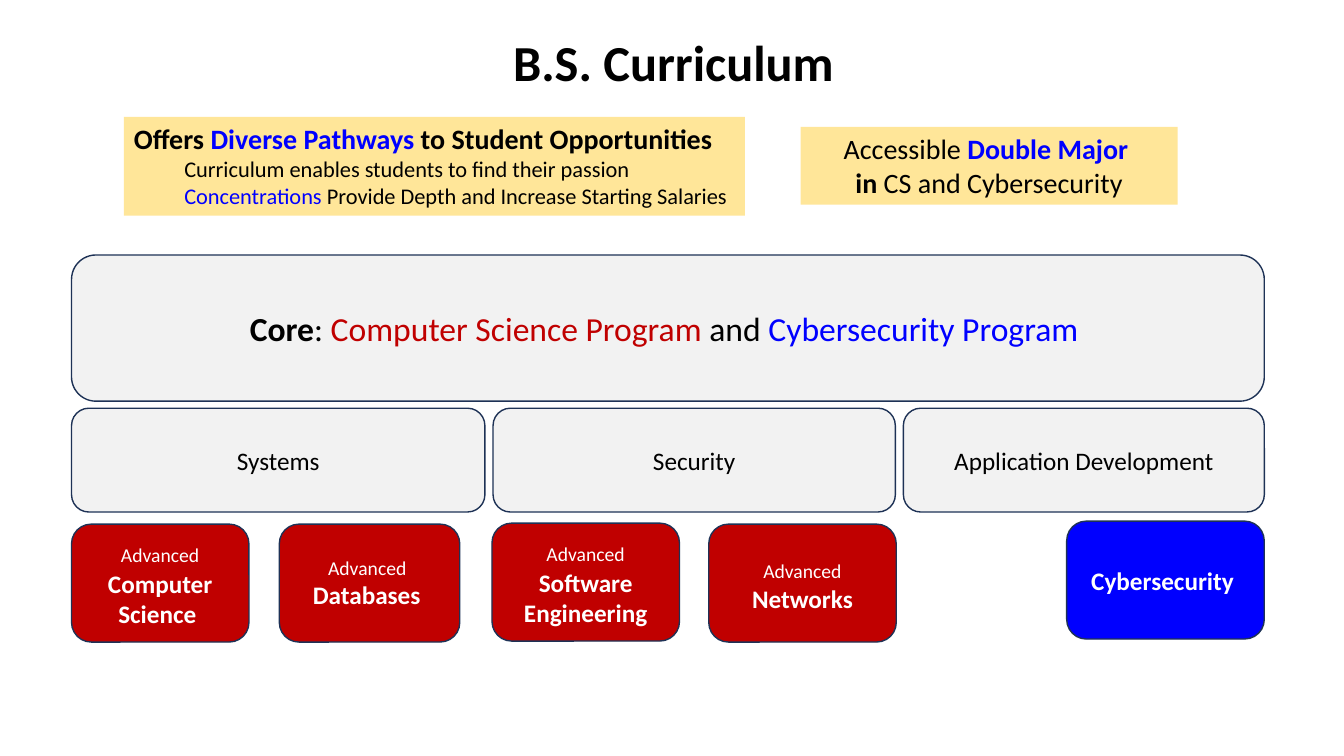
import pptx
import pptx.dml.color
import pptx.enum.shapes
import pptx.enum.text
import pptx.util

PX = 9144  # EMU in one px, 100 px to the inch
BLACK, WHITE, RED, BLUE = "000000", "FFFFFF", "C00000", "0000FF"
GREY, SAND, NAVY = "F2F2F2", "FFE699", "1E3256"
ALIGN = pptx.enum.text.PP_ALIGN
ANCHOR = pptx.enum.text.MSO_ANCHOR
SHAPE = pptx.enum.shapes.MSO_SHAPE


def px(length):
    return pptx.util.Emu(length * PX)


def rgb(hex_code):
    return pptx.dml.color.RGBColor.from_string(hex_code)


def run(text, size, color=BLACK, bold=False):
    """Describe a stretch of text with its format."""
    return text, {"size": pptx.util.Pt(size), "bold": bold}, color


class SlideBuilder:
    font_name = "Calibri"

    def __init__(self, slide):
        self.slide = slide

    def fill_text(self, frame, paragraphs, align=ALIGN.CENTER):
        for index, runs in enumerate(paragraphs):
            paragraph = frame.paragraphs[0] if index == 0 else frame.add_paragraph()
            paragraph.alignment = align
            for text, font_format, color in runs:
                piece = paragraph.add_run()
                piece.text = text
                for key, value in {"name": self.font_name, **font_format}.items():
                    setattr(piece.font, key, value)
                piece.font.color.rgb = rgb(color)

    def title(self, box, runs):
        title = self.slide.shapes.title
        for key, value in zip(("left", "top", "width", "height"), box):
            setattr(title, key, px(value))
        title.text_frame.vertical_anchor = ANCHOR.MIDDLE
        self.fill_text(title.text_frame, [runs])
        title.text_frame.paragraphs[0].line_spacing = 0.9

    def panel(self, kind, box, fill, paragraphs, align=ALIGN.CENTER, **frame_format):
        shape = self.slide.shapes.add_shape(kind, *map(px, box))
        shape.shadow.inherit = False
        shape.fill.solid()
        shape.fill.fore_color.rgb = rgb(fill)
        for key, value in {"word_wrap": True, **frame_format}.items():
            setattr(shape.text_frame, key, value)
        self.fill_text(shape.text_frame, paragraphs, align)
        return shape

    def block(self, box, fill, paragraphs):
        """Add a rounded, outlined curriculum block."""
        block = self.panel(SHAPE.ROUNDED_RECTANGLE, box, fill, paragraphs,
                           vertical_anchor=ANCHOR.MIDDLE)
        block.line.color.rgb = rgb(NAVY)
        block.line.width = pptx.util.Pt(1)

    def note(self, box, paragraphs, align=ALIGN.CENTER, wrap=True):
        """Add a sand-coloured highlight that grows with its text."""
        note = self.panel(SHAPE.RECTANGLE, box, SAND, paragraphs, align,
                          word_wrap=wrap, vertical_anchor=ANCHOR.TOP,
                          auto_size=pptx.enum.text.MSO_AUTO_SIZE.SHAPE_TO_FIT_TEXT)
        note.line.fill.background()
        return note


def main():
    deck = pptx.Presentation()
    deck.slide_width, deck.slide_height = px(1333), px(750)
    builder = SlideBuilder(deck.slides.add_slide(deck.slide_layouts[5]))

    builder.title((93, 14, 1150, 102), [run("B.S. Curriculum", 36, bold=True)])

    builder.block((71, 253, 1183, 145), GREY, [[
        run("Core", 24, bold=True),
        run(": ", 24),
        run("Computer Science Program ", 24, RED),
        run("and ", 24),
        run("Cybersecurity Program ", 24, BLUE),
    ]])

    areas = [("Systems", 71, 410), ("Security", 489, 399),
             ("Application Development", 896, 358)]
    for area, left, width in areas:
        builder.block((left, 405, width, 103), GREY, [[run(area, 18)]])

    advanced = run("Advanced", 14, WHITE)
    space = run(" ", 18, WHITE)
    concentrations = [
        ((71, 520, 176), RED, [[advanced, space, run("Computer Science ", 18, WHITE, True)]]),
        ((277, 520, 179), RED, [[run("Advanced ", 14, WHITE)],
                                [run("Databases ", 18, WHITE, True)]]),
        ((488, 519, 186), RED, [[advanced, space, run("Software Engineering", 18, WHITE, True)]]),
        ((703, 520, 186), RED, [[advanced, space, run("Networks", 18, WHITE, True)]]),
        ((1058, 517, 196), BLUE, [[run("Cybersecurity ", 18, WHITE, True)]]),
    ]
    for place, fill, paragraphs in concentrations:
        builder.block((*place, 117), fill, paragraphs)

    builder.note((794, 126, 374, 77), [
        [run("Accessible ", 20), run("Double Major ", 20, BLUE, True)],
        [run("in ", 20, bold=True), run("CS and Cybersecurity", 20)],
    ])

    pathways = builder.note((123, 116, 616, 98), [
        [run("Offers ", 20, bold=True), run("Diverse Pathways ", 20, BLUE, True),
         run("to Student Opportunities", 20, bold=True)],
        [run("Curriculum enables students to find their passion", 16)],
        [run("Concentrations ", 16, BLUE),
         run("Provide Depth and Increase Starting Salaries", 16)],
    ], ALIGN.LEFT, wrap=False)
    for detail in pathways.text_frame.paragraphs[1:]:
        detail.level = 1
        detail._p.get_or_add_pPr().set("marL", str(px(50)))

    deck.save("out.pptx")


if __name__ == "__main__":
    main()
